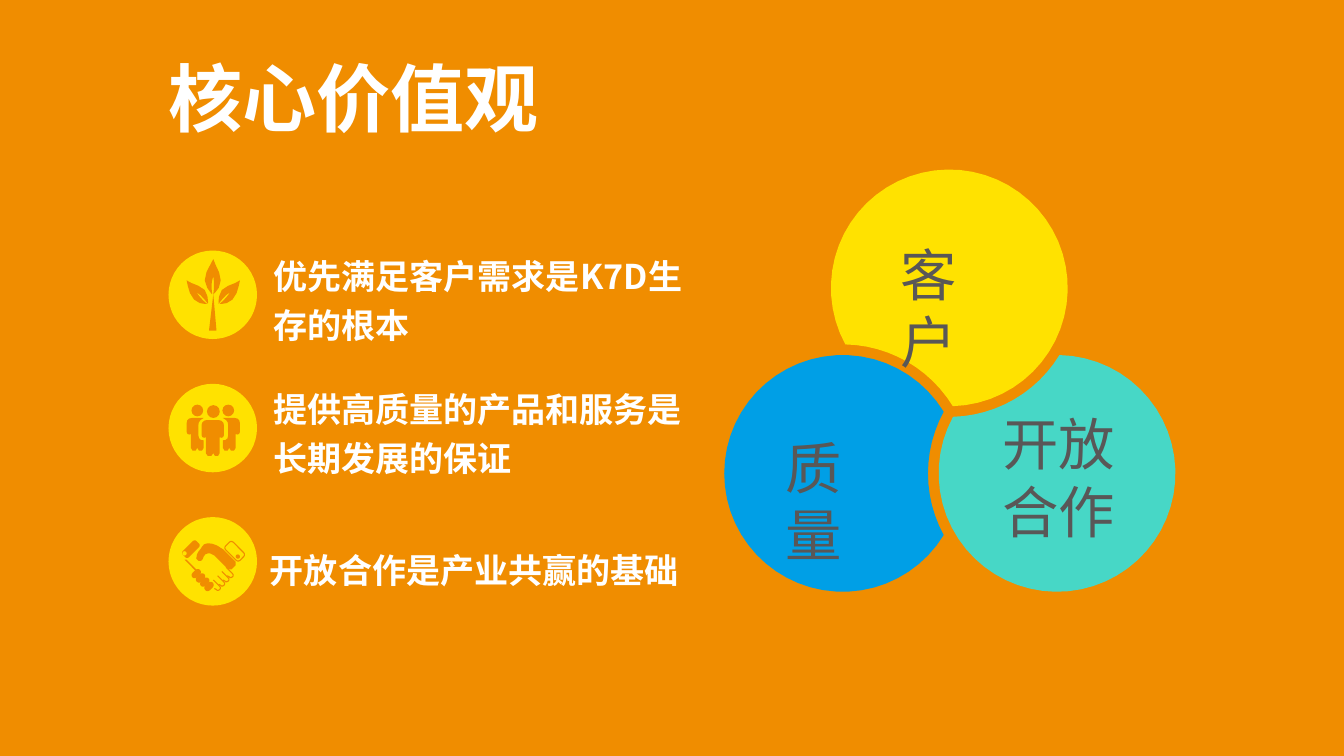
import math
from dataclasses import dataclass

import pptx
import pptx.dml.color
import pptx.enum.shapes
import pptx.enum.text
import pptx.oxml.ns
import pptx.util
from lxml import etree


@dataclass(frozen=True)
class Theme:
    font: str = "Noto Sans CJK SC"
    orange: str = "F08D00"
    yellow: str = "FFE200"
    teal: str = "47D7C6"
    blue: str = "009FE6"
    white: str = "FFFFFF"
    gray: str = "595757"
    title_size: int = 50
    body_size: int = 23
    label_size: int = 38


theme = Theme()
Inches = pptx.util.Inches
Point = pptx.util.Pt
Color = pptx.dml.color.RGBColor.from_string
Preset = pptx.enum.shapes.MSO_SHAPE
qualified = pptx.oxml.ns.qn


def add_run(paragraph, text, size, color, bold=False):
    """Add one run with the theme font for Latin and East Asian letters."""
    run = paragraph.add_run()
    run.text = text
    run.font.name = theme.font
    run.font.size = Point(size)
    run.font.bold = bold
    run.font.color.rgb = Color(color)
    east_asian = etree.SubElement(run.font._element, qualified("a:ea"))
    east_asian.set("typeface", theme.font)


def paint(shape, fill=None, line=None):
    shape.shadow.inherit = False
    if fill:
        shape.fill.solid()
        shape.fill.fore_color.rgb = Color(fill)
    else:
        shape.fill.background()
    if line:
        shape.line.color.rgb = Color(line)
        shape.line.width = Point(0.75)
    else:
        shape.line.fill.background()


presentation = pptx.Presentation()
presentation.slide_width = Inches(12.6)
presentation.slide_height = Inches(7.09)
slide = presentation.slides.add_slide(presentation.slide_layouts[1])
slide.background.fill.solid()
slide.background.fill.fore_color.rgb = Color(theme.orange)

# Title and list
icon_left, icon_top, icon_pitch, icon_size = 1.58, 2.35, 1.25, 0.83
title, body = slide.shapes.title, slide.placeholders[1]
frames = [(title, icon_left, 0.49, 3.6, 0.84), (body, 2.53, 2.32, 3.9, 3.2)]
for holder, left, top, width, height in frames:
    holder.left, holder.top = Inches(left), Inches(top)
    holder.width, holder.height = Inches(width), Inches(height)
    frame = holder.text_frame
    frame.margin_left = frame.margin_right = frame.margin_top = frame.margin_bottom = 0
    frame.vertical_anchor = pptx.enum.text.MSO_ANCHOR.TOP
    frame.auto_size = pptx.enum.text.MSO_AUTO_SIZE.NONE
    frame.word_wrap = holder is body

heading = title.text_frame.paragraphs[0]
heading.alignment = pptx.enum.text.PP_ALIGN.LEFT
add_run(heading, "核心价值观", theme.title_size, theme.white, True)

values = [
    ("优先满足客户需求是K7D生存的根本", 0, 0.03),
    ("提供高质量的产品和服务是长期发展的保证", 23.5, 0.03),
    ("开放合作是产业共赢的基础", 42.5, 0),
]
for index, (text, space_before, indent) in enumerate(values):
    paragraph = body.text_frame.paragraphs[0] if index == 0 else body.text_frame.add_paragraph()
    paragraph.line_spacing = 1.2
    paragraph.space_before = Point(space_before)
    paragraph.space_after = Point(0)
    properties = paragraph._p.get_or_add_pPr()
    properties.set("marL", str(Inches(indent)))
    properties.set("indent", "0")
    etree.SubElement(properties, qualified("a:buNone"))
    add_run(paragraph, text, theme.body_size, theme.white, True)

# Preset parts of the icons: kind, centre, size, rotation, fill, line
oval, rounded = Preset.OVAL, Preset.ROUNDED_RECTANGLE
parts = [
    (oval, icon_left + icon_size / 2, icon_top + icon_pitch * row + icon_size / 2,
     icon_size, icon_size, 0, theme.yellow, None)
    for row in range(3)
]
heads = [(1.85, 3.85, 0.11), (2.0, 3.86, 0.12), (2.14, 3.85, 0.11)]
parts += [(oval, x, y, size, size, 0, theme.orange, None) for x, y, size in heads]
parts += [
    (rounded, 1.84 + 0.04 * finger, 5.38 + 0.04 * finger, 0.1, 0.06, -45, theme.orange, None)
    for finger in range(4)
]
parts += [
    (rounded, 1.79, 5.15, 0.18, 0.08, -45, theme.orange, None),
    (oval, 1.73, 5.19, 0.04, 0.04, 0, theme.yellow, None),
    (rounded, 2.2, 5.17, 0.19, 0.1, 45, None, theme.orange),
    (oval, 2.23, 5.22, 0.04, 0.04, 0, theme.orange, None),
]
for kind, x, y, width, height, rotation, fill, line in parts:
    part = slide.shapes.add_shape(
        kind, Inches(x - width / 2), Inches(y - height / 2), Inches(width), Inches(height))
    part.rotation = rotation
    if kind == rounded:
        part.adjustments[0] = 0.5 if height == 0.06 else 0.25
    paint(part, fill, line)

# Outlines: a pair is a straight step, six numbers are a Bezier curve
side_leaf = [
    (1.84, 2.74), (1.87, 2.78, 1.9, 2.82, 1.94, 2.85), (1.94, 2.85, 1.87, 2.86, 1.82, 2.81),
    (1.77, 2.76, 1.76, 2.67, 1.75, 2.63), (1.78, 2.66, 1.87, 2.67, 1.92, 2.72),
    (1.96, 2.78, 1.95, 2.85, 1.95, 2.85), (1.92, 2.81, 1.88, 2.76, 1.84, 2.74),
]
top_leaf = [
    (2, 2.59), (2.01, 2.64, 2.01, 2.71, 2, 2.76), (2, 2.76, 2.07, 2.71, 2.07, 2.63),
    (2.07, 2.55, 2.01, 2.48, 2, 2.43), (1.98, 2.48, 1.92, 2.55, 1.92, 2.63),
    (1.93, 2.71, 1.99, 2.76, 1.99, 2.76), (1.98, 2.7, 1.98, 2.64, 2, 2.59),
]
stem = [(2.03, 3.1), (2, 2.76), (1.96, 3.1)]
side_person = [
    (1.85, 4.2), (1.85, 4.24, 1.79, 4.24, 1.79, 4.2), (1.79, 4.07),
    (1.78, 4.08, 1.75, 4.08, 1.75, 4.05), (1.75, 3.97), (1.75, 3.94, 1.77, 3.92, 1.8, 3.92),
    (1.91, 3.92), (1.87, 3.94, 1.86, 3.96, 1.86, 3.99), (1.86, 4.08),
    (1.86, 4.12, 1.88, 4.13, 1.91, 4.13), (1.91, 4.2), (1.91, 4.24, 1.85, 4.24, 1.85, 4.2),
]
middle_person = [
    (2, 4.25), (2, 4.29, 1.93, 4.29, 1.93, 4.25), (1.93, 4.1),
    (1.92, 4.11, 1.89, 4.11, 1.89, 4.08), (1.89, 3.99), (1.89, 3.96, 1.91, 3.94, 1.94, 3.94),
    (2.05, 3.94), (2.08, 3.94, 2.1, 3.96, 2.1, 3.99), (2.1, 4.08),
    (2.1, 4.11, 2.07, 4.11, 2.06, 4.1), (2.06, 4.25), (2.06, 4.29, 2, 4.29, 2, 4.25),
]
palm = [
    (2.09, 5.15), (2.07, 5.14), (2.05, 5.12, 2.02, 5.11, 1.99, 5.1),
    (1.97, 5.1, 1.95, 5.09, 1.93, 5.1), (1.91, 5.1, 1.9, 5.12, 1.88, 5.15),
    (1.86, 5.17, 1.84, 5.2, 1.84, 5.24), (1.86, 5.26), (1.89, 5.27, 1.9, 5.25, 1.91, 5.22),
    (1.92, 5.19, 1.95, 5.19, 1.97, 5.19), (2.01, 5.21), (2.14, 5.34), (2.17, 5.34),
    (2.21, 5.3), (2.21, 5.27),
]
wrist = [(1.84, 5.34), (1.75, 5.25), (1.73, 5.25), (1.83, 5.35)]
fingertip = [
    (2.01, 5.52), (2.03, 5.53), (2.03, 5.54, 2.05, 5.54, 2.06, 5.53),
    (2.07, 5.52, 2.07, 5.51, 2.06, 5.5), (2, 5.44),
]
right_leaf, right_person = [
    [tuple(value if place % 2 else 4 - value for place, value in enumerate(step)) for step in half]
    for half in (side_leaf, side_person)
]
fingertips = [
    [tuple(value + (-shift if place % 2 else shift) for place, value in enumerate(step))
     for step in fingertip]
    for shift in (0, 0.04, 0.08, 0.12)
]
outlines = [
    ([side_leaf, top_leaf, stem, right_leaf], theme.orange, None),
    ([side_person, middle_person, right_person], theme.orange, None),
    ([palm, wrist], theme.orange, None),
    (fingertips, None, theme.orange),
]

# Each value circle is notched by a slightly larger circle around its neighbour
radius, notch_radius = 1.11, 1.21
rim_steps, notch_steps = 48, 12
customer, quality, cooperation = (8.9, 2.7), (7.9, 4.44), (9.91, 4.44)
circles = [
    (cooperation, customer, theme.teal),
    (customer, quality, theme.yellow),
    (quality, cooperation, theme.blue),
]
for center, neighbour, color in circles:
    distance = math.dist(center, neighbour)
    toward = math.atan2(neighbour[1] - center[1], neighbour[0] - center[0])
    gap = math.acos((radius**2 + distance**2 - notch_radius**2) / (2 * radius * distance))
    bite = math.acos((notch_radius**2 + distance**2 - radius**2) / (2 * notch_radius * distance))
    arcs = [
        (center, radius, toward + gap, 2 * (math.pi - gap), rim_steps),
        (neighbour, notch_radius, toward + math.pi + bite, -2 * bite, notch_steps),
    ]
    rim = [
        (x + size * math.cos(start + sweep * step / steps),
         y + size * math.sin(start + sweep * step / steps))
        for (x, y), size, start, sweep, steps in arcs for step in range(steps)
    ]
    outlines.append(([rim], color, None))

curve_steps = 3
for contours, fill, line in outlines:
    builder = slide.shapes.build_freeform(*map(Inches, contours[0][0]))
    for index, contour in enumerate(contours):
        points = [contour[0]]
        for step in contour[1:]:
            curve = points[-1] + step
            for t in (part / curve_steps for part in range(1, curve_steps + 1)):
                weights = ((1 - t) ** 3, 3 * t * (1 - t) ** 2, 3 * t * t * (1 - t), t ** 3)
                if len(step) == 6:
                    points.append(tuple(
                        sum(weight * value for weight, value in zip(weights, curve[axis::2]))
                        for axis in (0, 1)))
            if len(step) == 2:
                points.append(step)
        points = [(Inches(x), Inches(y)) for x, y in points]
        if index:
            builder.move_to(*points[0])
        builder.add_line_segments(points[1:], close=fill is not None)
    paint(builder.convert_to_shape(), fill, line)

# Labels on the value circles
labels = [
    (["客户"], 8.44, 2.25, 0.78, 0.83),
    (["质量"], 7.36, 4.06, 0.78, 0.83),
    (["开放", "合作"], 9.4, 3.84, 1.07, 1.28),
]
for lines, left, top, width, height in labels:
    label = slide.shapes.add_textbox(Inches(left), Inches(top), Inches(width), Inches(height))
    frame = label.text_frame
    frame.margin_left = frame.margin_right = frame.margin_top = frame.margin_bottom = 0
    frame.word_wrap = len(lines) == 1
    for index, text in enumerate(lines):
        paragraph = frame.paragraphs[0] if index == 0 else frame.add_paragraph()
        add_run(paragraph, text, theme.label_size, theme.gray)

presentation.save("out.pptx")
